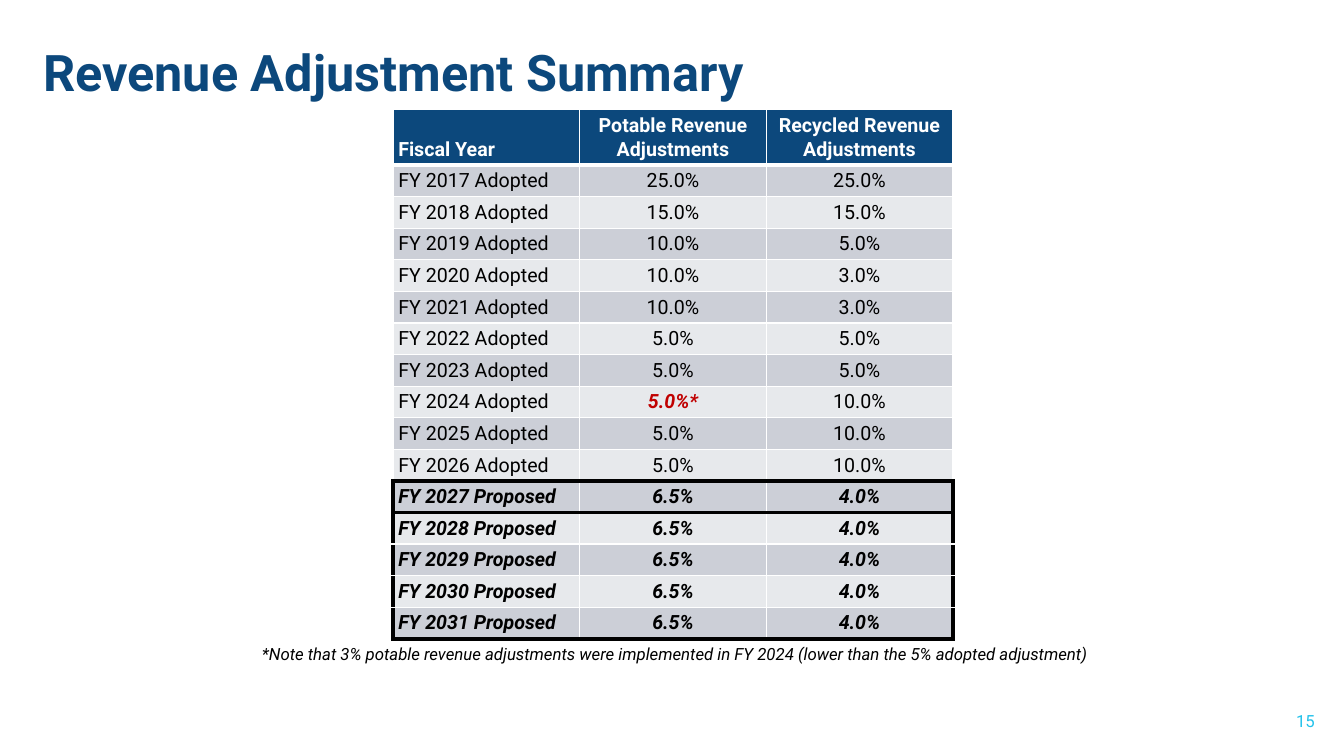
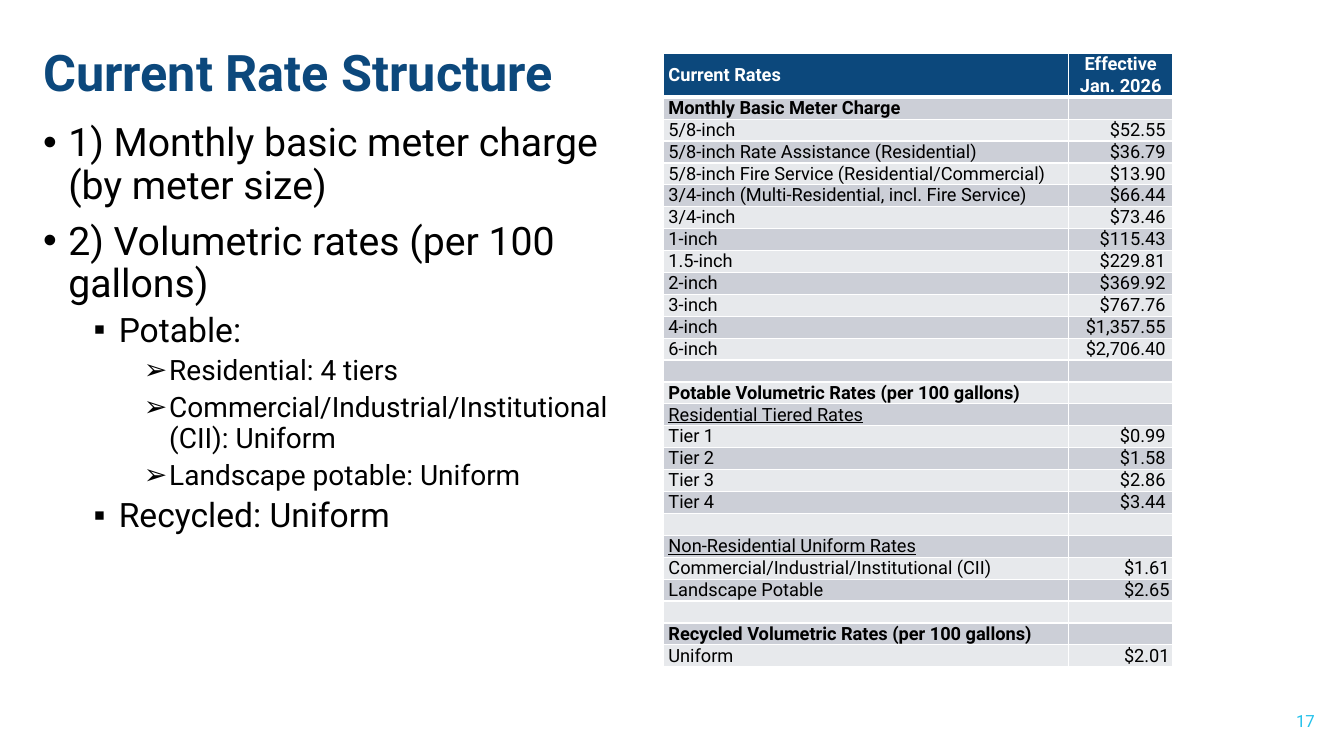
import lxml.etree
import pptx
import pptx.dml.color
import pptx.enum.text
import pptx.oxml.ns
import pptx.util

Inches = pptx.util.Inches
Pt = pptx.util.Pt
qn = pptx.oxml.ns.qn
ALIGN = pptx.enum.text.PP_ALIGN
ANCHOR = pptx.enum.text.MSO_ANCHOR

NAVY, CYAN, RED = "0C487C", "24C2EB", "C00000"
BLACK, WHITE = "000000", "FFFFFF"
BANDS = ("E7E9EC", "CCCFD7")


def rgb(color):
    return pptx.dml.color.RGBColor.from_string(color)


class Deck:
    """Shared style and the slide being built."""

    font = "Roboto"
    # bullet, font size, left indent and space before, by level
    levels = (("•", 28, 0.25, 10), ("▪", 24, 0.75, 5), ("➢", 20, 1.25, 5))

    def __init__(self):
        self.prs = pptx.Presentation()
        self.prs.slide_width = Inches(13.33)
        self.prs.slide_height = Inches(7.5)

    def slide(self, title, number):
        self.s = self.prs.slides.add_slide(self.prs.slide_layouts[6])
        p = self.text(title, 0.33, 0.4, 12.8, 0.7, 36, NAVY, bold=True, anchor=ANCHOR.MIDDLE)
        p.line_spacing = 0.9
        p = self.text(str(number), 10.14, 6.95, 3, 0.4, 12, CYAN, anchor=ANCHOR.MIDDLE)
        p.alignment = ALIGN.RIGHT

    def style(self, p, size, color=BLACK, bold=False, italic=False, underline=False):
        for r in p.runs:
            f = r.font
            f.name, f.size = self.font, Pt(size)
            f.bold, f.italic, f.underline = bold, italic, underline
            f.color.rgb = rgb(color)

    def box(self, x, y, w, h, anchor=ANCHOR.TOP):
        tf = self.s.shapes.add_textbox(Inches(x), Inches(y), Inches(w), Inches(h)).text_frame
        tf.word_wrap = True
        tf.vertical_anchor = anchor
        return tf

    def text(self, text, x, y, w, h, size, color=BLACK, bold=False, italic=False,
             anchor=ANCHOR.TOP):
        p = self.box(x, y, w, h, anchor).paragraphs[0]
        p.text = text
        self.style(p, size, color, bold, italic)
        return p

    def bullets(self, items, x, y, w, h):
        tf = self.box(x, y, w, h)
        for i, (level, text) in enumerate(items):
            mark, size, indent, before = self.levels[level]
            p = tf.paragraphs[0] if i == 0 else tf.add_paragraph()
            p.text = text
            p.level = level
            p.line_spacing = 0.9
            p.space_before = Pt(before if i else 0)
            pPr = p._p.get_or_add_pPr()
            pPr.set("marL", str(Inches(indent)))
            pPr.set("indent", str(Inches(-0.25)))
            lxml.etree.SubElement(pPr, qn("a:buFont"), typeface="Arial")
            lxml.etree.SubElement(pPr, qn("a:buChar"), char=mark)
            self.style(p, size)

    def table(self, x, y, widths, header_height, row_height, row_count):
        heights = [header_height] + [row_height] * (row_count - 1)
        frame = self.s.shapes.add_table(row_count, len(widths), Inches(x), Inches(y),
                                        Inches(sum(widths)), Inches(sum(heights)))
        for col, width in zip(frame.table.columns, widths):
            col.width = Inches(width)
        for row, height in zip(frame.table.rows, heights):
            row.height = Inches(height)
        return frame.table

    def cell(self, table, row, col, text, size, align, anchor, margins, frames=(), **look):
        cell = table.cell(row, col)
        cell.margin_left, cell.margin_top, cell.margin_right, cell.margin_bottom = (
            Inches(m) for m in margins)
        cell.vertical_anchor = anchor
        self.borders(cell, row, col, len(table.columns) - 1, frames)
        cell.fill.solid()
        cell.fill.fore_color.rgb = rgb(BANDS[row % 2] if row else NAVY)
        p = cell.text_frame.paragraphs[0]
        p.alignment = align
        if text:
            p.text = text
            self.style(p, size, **look)
        else:
            # An empty cell needs its size on the paragraph end
            lxml.etree.SubElement(p._p, qn("a:endParaRPr"), sz=str(size * 100))

    def borders(self, cell, row, col, last_col, frames):
        """White grid, a thick line under the header, black frames round row ranges."""
        edges = {row_edge for first, last in frames for row_edge in (first, last + 1)}
        framed = any(first <= row <= last for first, last in frames)
        black = {"L": framed and col == 0, "R": framed and col == last_col,
                 "T": row in edges, "B": row + 1 in edges}
        for side, is_black in black.items():
            thick = is_black or (row == 0 and side == "B") or (row == 1 and side == "T")
            ln = lxml.etree.SubElement(cell._tc.get_or_add_tcPr(), qn("a:ln" + side),
                                       w=str(Pt(3 if thick else 1)))
            fill = lxml.etree.SubElement(ln, qn("a:solidFill"))
            lxml.etree.SubElement(fill, qn("a:srgbClr"), val=BLACK if is_black else WHITE)


def revenue_slide(deck):
    deck.slide("Revenue Adjustment Summary", 15)

    # Adjustments by fiscal year
    potable = ["25.0%", "15.0%"] + ["10.0%"] * 3 + ["5.0%"] * 2 + ["5.0%*"] + ["5.0%"] * 2
    recycled = (["25.0%", "15.0%", "5.0%"] + ["3.0%"] * 2 + ["5.0%"] * 2 + ["10.0%"] * 3)
    potable += ["6.5%"] * 5
    recycled += ["4.0%"] * 5
    rows = [("Fiscal Year", "Potable Revenue Adjustments", "Recycled Revenue Adjustments")]
    for year, pair in enumerate(zip(potable, recycled), 2017):
        status = "Adopted" if year < 2027 else "Proposed"
        rows.append((f"FY {year} {status}", *pair))

    table = deck.table(3.9, 1.09, [1.85] * 3, 0.54, 0.31, len(rows))
    for i, row in enumerate(rows):
        for j, text in enumerate(row):
            starred = text.endswith("*")
            strong = starred or i > 10
            color = WHITE if i == 0 else RED if starred else BLACK
            deck.cell(table, i, j, text, 14, ALIGN.CENTER if j else ALIGN.LEFT, ANCHOR.BOTTOM,
                      (0.05, 0.04, 0.05, 0.04), frames=((11, 11), (12, 15)),
                      color=color, bold=strong or i == 0, italic=strong)

    # Footnote
    deck.text("*Note that 3% potable revenue adjustments were implemented in FY 2024 "
              "(lower than the 5% adopted adjustment)", 2.5, 6.34, 10.5, 0.3, 12, italic=True)


def rates_slide(deck):
    deck.slide("Current Rate Structure", 17)

    # Rate components
    deck.bullets([
        (0, "1) Monthly basic meter charge (by meter size)"),
        (0, "2) Volumetric rates (per 100 gallons)"),
        (1, "Potable:"),
        (2, "Residential: 4 tiers"),
        (2, "Commercial/Industrial/Institutional (CII): Uniform"),
        (2, "Landscape potable: Uniform"),
        (1, "Recycled: Uniform"),
    ], 0.33, 1.17, 5.93, 5.33)

    # Rate table
    rows = [
        ("Current Rates", "Effective Jan. 2026"),
        ("Monthly Basic Meter Charge", ""),
        ("5/8-inch", "$52.55"),
        ("5/8-inch Rate Assistance (Residential)", "$36.79"),
        ("5/8-inch Fire Service (Residential/Commercial)", "$13.90"),
        ("3/4-inch (Multi-Residential, incl. Fire Service)", "$66.44"),
        ("3/4-inch", "$73.46"),
        ("1-inch", "$115.43"),
        ("1.5-inch", "$229.81"),
        ("2-inch", "$369.92"),
        ("3-inch", "$767.76"),
        ("4-inch", "$1,357.55"),
        ("6-inch", "$2,706.40"),
        ("", ""),
        ("Potable Volumetric Rates (per 100 gallons)", ""),
        ("Residential Tiered Rates", ""),
        ("Tier 1", "$0.99"),
        ("Tier 2", "$1.58"),
        ("Tier 3", "$2.86"),
        ("Tier 4", "$3.44"),
        ("", ""),
        ("Non-Residential Uniform Rates", ""),
        ("Commercial/Industrial/Institutional (CII)", "$1.61"),
        ("Landscape Potable", "$2.65"),
        ("", ""),
        ("Recycled Volumetric Rates (per 100 gallons)", ""),
        ("Uniform", "$2.01"),
    ]
    sections, subsections = (0, 1, 14, 25), (15, 21)
    uniform_start = 22
    table = deck.table(6.58, 0.53, [4.02, 1.03], 0.42, 0.21, len(rows))
    for i, row in enumerate(rows):
        for j, text in enumerate(row):
            align, right = ALIGN.LEFT, 0.05
            if j and i == 0:
                align = ALIGN.CENTER
            elif j:
                align, right = ALIGN.RIGHT, 0.07 if i < uniform_start else 0.03
            deck.cell(table, i, j, text, 13, align, ANCHOR.MIDDLE, (0.05, 0, right, 0),
                      color=BLACK if i else WHITE, bold=i in sections,
                      underline=i in subsections)


def main():
    deck = Deck()
    revenue_slide(deck)
    rates_slide(deck)
    deck.prs.save("out.pptx")


if __name__ == "__main__":
    main()
